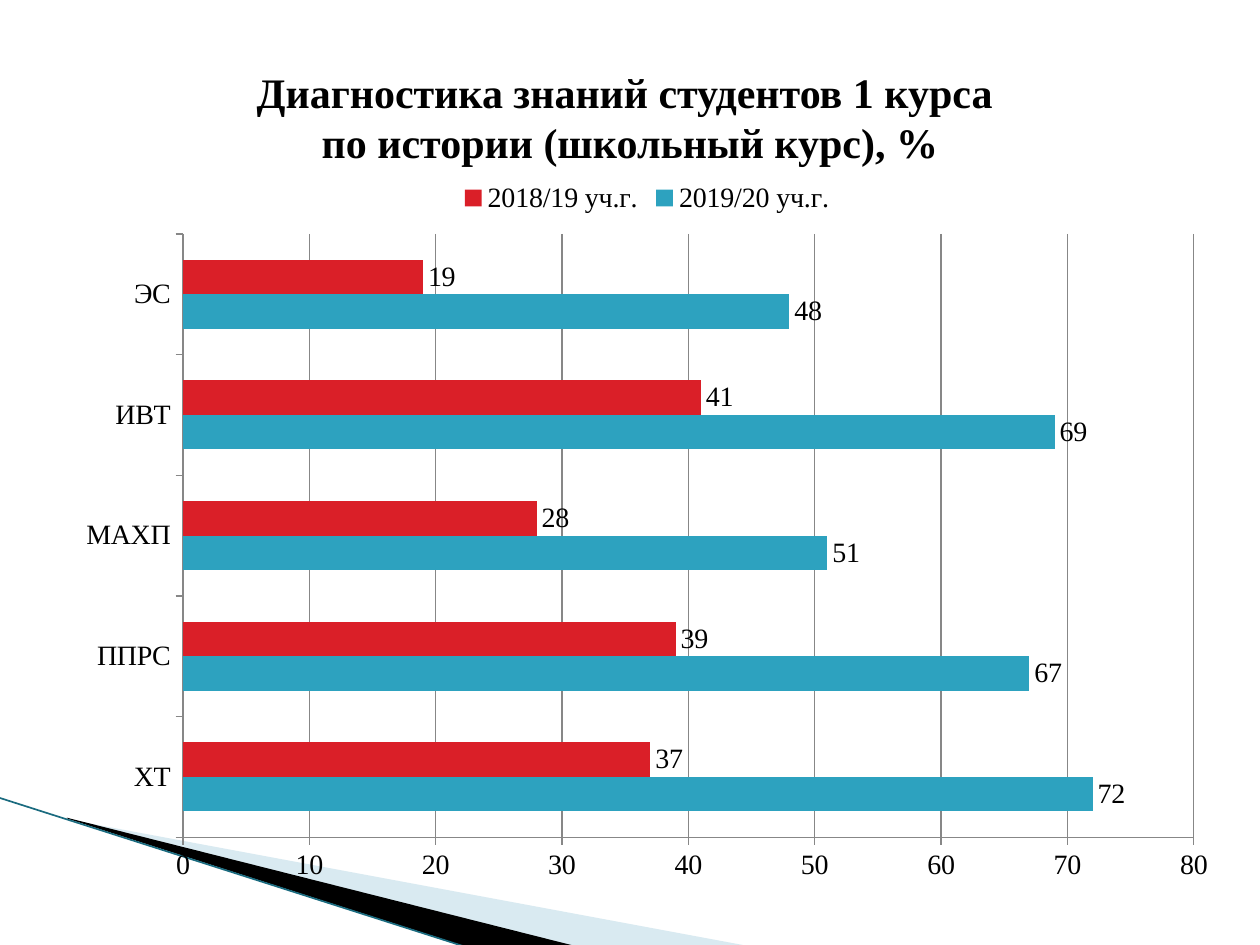
from lxml.etree import SubElement
from pptx import Presentation
from pptx.chart.data import CategoryChartData
from pptx.dml.color import RGBColor
from pptx.enum.chart import XL_CHART_TYPE as ChartType, XL_LABEL_POSITION as LabelPos
from pptx.enum.chart import XL_LEGEND_POSITION as LegendPos, XL_TICK_MARK as TickMark
from pptx.enum.shapes import MSO_CONNECTOR as Connector
from pptx.enum.text import MSO_ANCHOR as Anchor, PP_ALIGN as Align
from pptx.oxml.ns import qn
from pptx.util import Pt

# Content
TITLE = "Диагностика знаний студентов 1 курса \vпо истории (школьный курс), %"
GROUPS = ["ХТ", "ППРС", "МАХП", "ИВТ", "ЭС"]
YEARS = [
    ("2019/20 уч.г.", [72, 67, 51, 69, 48], "2DA2BF"),
    ("2018/19 уч.г.", [37, 39, 28, 41, 19], "DA1F28"),
]

THEME = {
    "font": "Times New Roman", "title_size": 24, "chart_size": 16,
    "text": "000000", "grid": "878787",
    "pale": "A0CBDC", "dark": "000000", "edge": "1A6B7F",
}

# Layout in points: left, top, width, height
SLIDE_SIZE = (720, 540)
TITLE_BOX = (36, 21.6, 648, 90)
CHART_BOX = (36, 95.76, 667.44, 416.16)

# Corner wedges: outline, colour, opacity in percent
WEDGES = [
    ([(39.6, 468.4), (428.4, 540.7), (328.3, 540.7), (39.6, 468)], "pale", 40),
    ([(38.2, 467.3), (329, 540.7), (267.8, 541.4), (38.9, 468)], "dark", 100),
]
WEDGE_EDGE = (-0.7, 455.8, 267.1, 541.4)


def color(key):
    return RGBColor.from_string(THEME[key])


def points(values):
    return [Pt(v) for v in values]


def style_font(font, size, bold=False):
    font.name, font.size, font.bold = THEME["font"], Pt(THEME[size]), bold
    font.color.rgb = color("text")


def style_line(line, key, width):
    line.color.rgb, line.width = color(key), Pt(width)


def add_wedge(slide, outline, key, opacity):
    start, *rest = [points(p) for p in outline]
    builder = slide.shapes.build_freeform(*start)
    builder.add_line_segments(rest, close=True)
    wedge = builder.convert_to_shape()
    wedge.shadow.inherit = False
    wedge.fill.solid()
    wedge.fill.fore_color.rgb = color(key)
    wedge.line.fill.background()
    if opacity < 100:
        rgb = wedge.fill._xPr.find(f"{qn('a:solidFill')}/{qn('a:srgbClr')}")
        SubElement(rgb, qn("a:alpha"), val=str(opacity * 1000))


def add_diagnostics_chart(slide):
    data = CategoryChartData()
    data.categories = GROUPS
    for year, scores, _ in YEARS:
        data.add_series(year, scores)
    chart = slide.shapes.add_chart(
        ChartType.BAR_CLUSTERED, *points(CHART_BOX), data).chart
    style_font(chart.font, "chart_size")
    chart.has_title = False
    chart.has_legend = True
    chart.legend.position = LegendPos.TOP
    chart.legend.include_in_layout = False

    # Axes
    scores_axis = chart.value_axis
    scores_axis.minimum_scale, scores_axis.maximum_scale = 0, 80
    scores_axis.major_unit = 10
    scores_axis.has_major_gridlines = True
    style_line(scores_axis.major_gridlines.format.line, "grid", 0.75)
    for axis in (chart.category_axis, scores_axis):
        axis.major_tick_mark = TickMark.OUTSIDE
        style_line(axis.format.line, "grid", 0.75)

    # Bars and their values
    plot = chart.plots[0]
    plot.vary_by_categories = False
    plot.gap_width, plot.overlap = 150, 0
    for series, (_, _, bar_color) in zip(plot.series, YEARS):
        series.format.fill.solid()
        series.format.fill.fore_color.rgb = RGBColor.from_string(bar_color)
        labels = series.data_labels
        labels.show_value = True
        labels.position = LabelPos.OUTSIDE_END
        style_font(labels.font, "chart_size")


def main():
    prs = Presentation()
    prs.slide_width, prs.slide_height = points(SLIDE_SIZE)
    slide = prs.slides.add_slide(prs.slide_layouts[5])

    # Corner decoration
    for wedge in WEDGES:
        add_wedge(slide, *wedge)
    edge = slide.shapes.add_connector(Connector.STRAIGHT, *points(WEDGE_EDGE))
    style_line(edge.line, "edge", 0.95)
    SubElement(edge._element.spPr, qn("a:effectLst"))

    add_diagnostics_chart(slide)

    # Title
    title = slide.shapes.title
    title.left, title.top, title.width, title.height = points(TITLE_BOX)
    title.text_frame.text = TITLE
    title.text_frame.vertical_anchor = Anchor.MIDDLE
    heading = title.text_frame.paragraphs[0]
    heading.alignment = Align.CENTER
    style_font(heading.font, "title_size", bold=True)

    prs.save("out.pptx")


if __name__ == "__main__":
    main()
